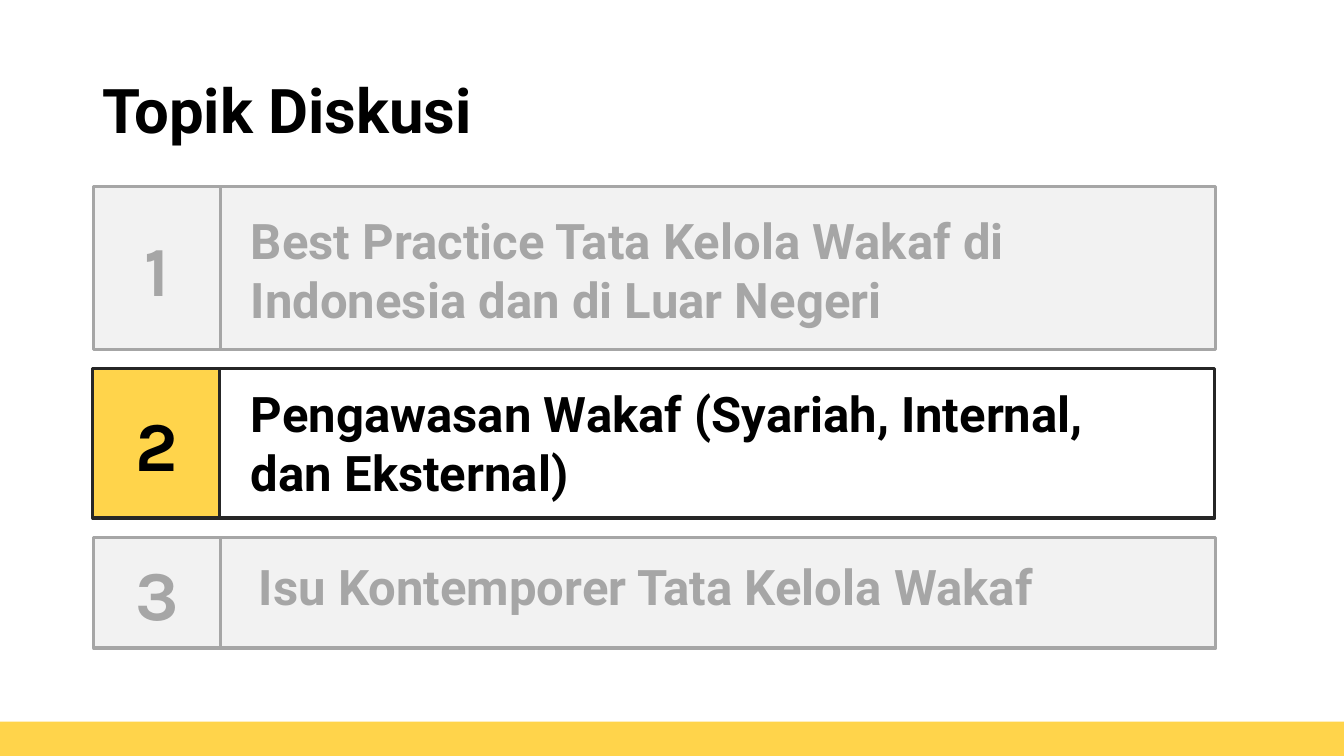
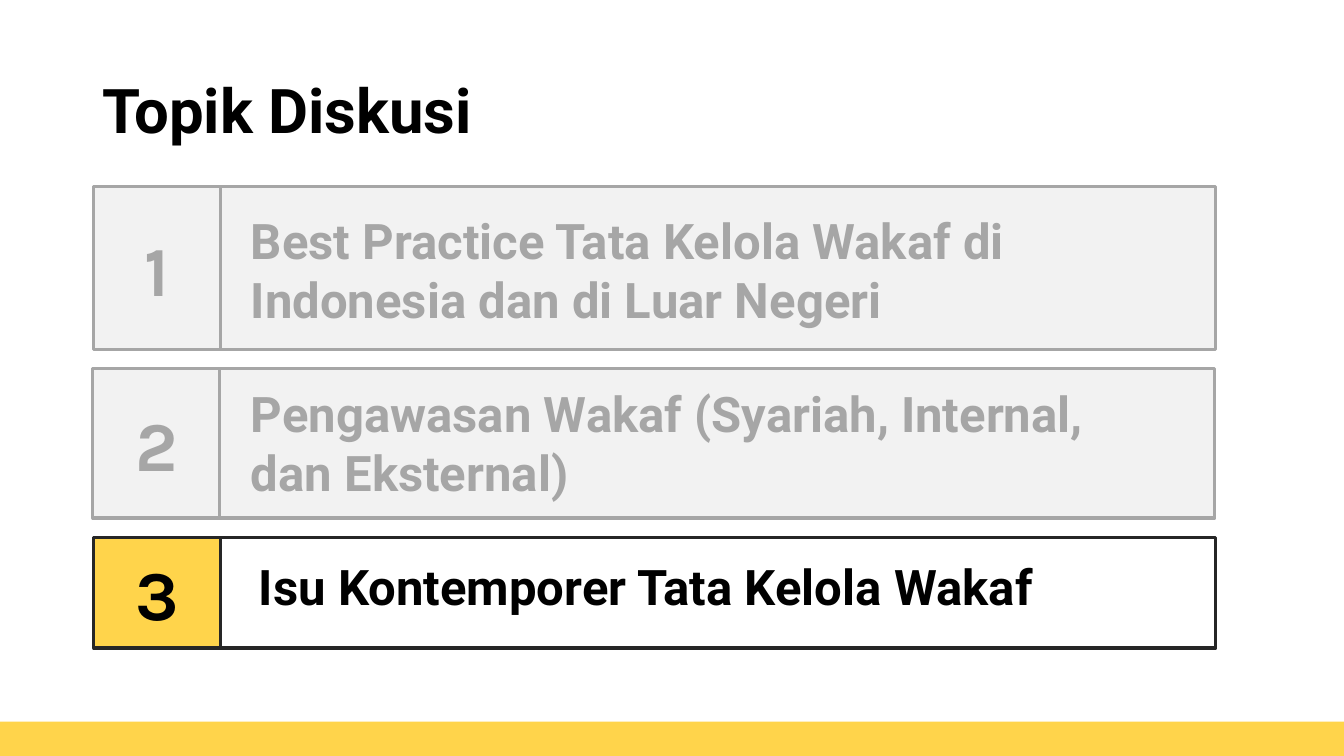
from dataclasses import dataclass

from pptx import Presentation
from pptx.dml.color import RGBColor
from pptx.enum.shapes import MSO_SHAPE as Shape
from pptx.enum.text import MSO_ANCHOR as Anchor, PP_ALIGN as Align
from pptx.util import Inches, Pt

# Content: number, topic, row left, row height, text left, text drop, text height
TITLE = "Topik Diskusi"
TOPICS = [
    ("1", "Best Practice Tata Kelola Wakaf di Indonesia dan di Luar Negeri",
     0.93, 1.62, 2.39, 0.19, 1.28),
    ("2", "Pengawasan Wakaf (Syariah, Internal, dan Eksternal)",
     0.92, 1.48, 2.39, 0.10, 1.28),
    ("3", "Isu Kontemporer Tata Kelola Wakaf",
     0.93, 1.10, 2.47, 0.14, 0.69),
]
ACTIVE = ["2", "3"]  # the topic lit on each slide


# Theme
@dataclass(frozen=True)
class Tone:
    badge: str
    panel: str
    line: str
    ink: str


@dataclass(frozen=True)
class Theme:
    accent: str = "FFD44B"
    ink: str = "000000"
    font: str = "Roboto"
    digit: str = "Karla"
    head: int = 44
    body: int = 35
    num: int = 50
    edge: float = 2.25
    lit: Tone = Tone("FFD44B", "FFFFFF", "262626", "000000")
    dim: Tone = Tone("F2F2F2", "F2F2F2", "A6A6A6", "A6A6A6")


T = Theme()
WIDE, HIGH = 13.33, 7.5
TOP, GAP = 1.85, 0.19
BADGE, PANEL, TEXT = 1.26, 9.87, 9.28
BAND = 0.34


# Helpers
def write(shape, text, font=T.font, size=T.body, color=T.ink,
          align=Align.LEFT, anchor=Anchor.TOP, space=1.0):
    frame = shape.text_frame
    frame.word_wrap = True
    frame.vertical_anchor = anchor
    para = frame.paragraphs[0]
    para.alignment = align
    para.line_spacing = space
    run = para.add_run()
    run.text = text
    run.font.name = font
    run.font.size = Pt(size)
    run.font.bold = True
    run.font.color.rgb = RGBColor.from_string(color)


def rect(slide, box, fill, line=None):
    shape = slide.shapes.add_shape(Shape.RECTANGLE, *map(Inches, box))
    shape.shadow.inherit = False
    shape.fill.solid()
    shape.fill.fore_color.rgb = RGBColor.from_string(fill)
    if line:
        shape.line.color.rgb = RGBColor.from_string(line)
        shape.line.width = Pt(T.edge)
    else:
        shape.line.fill.background()
    return shape


def label(slide, box, text, **style):
    write(slide.shapes.add_textbox(*map(Inches, box)), text, **style)


# Slide parts
def base(deck):
    slide = deck.slides.add_slide(deck.slide_layouts[6])
    label(slide, (0.92, 0.4, 11.5, 1.45), TITLE, size=T.head,
          anchor=Anchor.MIDDLE, space=0.9)
    rect(slide, (0, HIGH - BAND, WIDE, BAND), T.accent)
    return slide


def agenda(slide, active):
    top = TOP
    for num, topic, left, high, inset, drop, tall in TOPICS:
        tone = T.lit if num == active else T.dim
        badge = rect(slide, (left, top, BADGE, high), tone.badge, tone.line)
        write(badge, num, font=T.digit, size=T.num, color=tone.ink,
              align=Align.CENTER, anchor=Anchor.MIDDLE)
        rect(slide, (left + BADGE, top, PANEL, high), tone.panel, tone.line)
        label(slide, (inset, top + drop, TEXT, tall), topic, color=tone.ink)
        top += high + GAP


def main():
    deck = Presentation()
    deck.slide_width, deck.slide_height = Inches(WIDE), Inches(HIGH)
    for active in ACTIVE:
        agenda(base(deck), active)
    deck.save("out.pptx")


if __name__ == "__main__":
    main()
